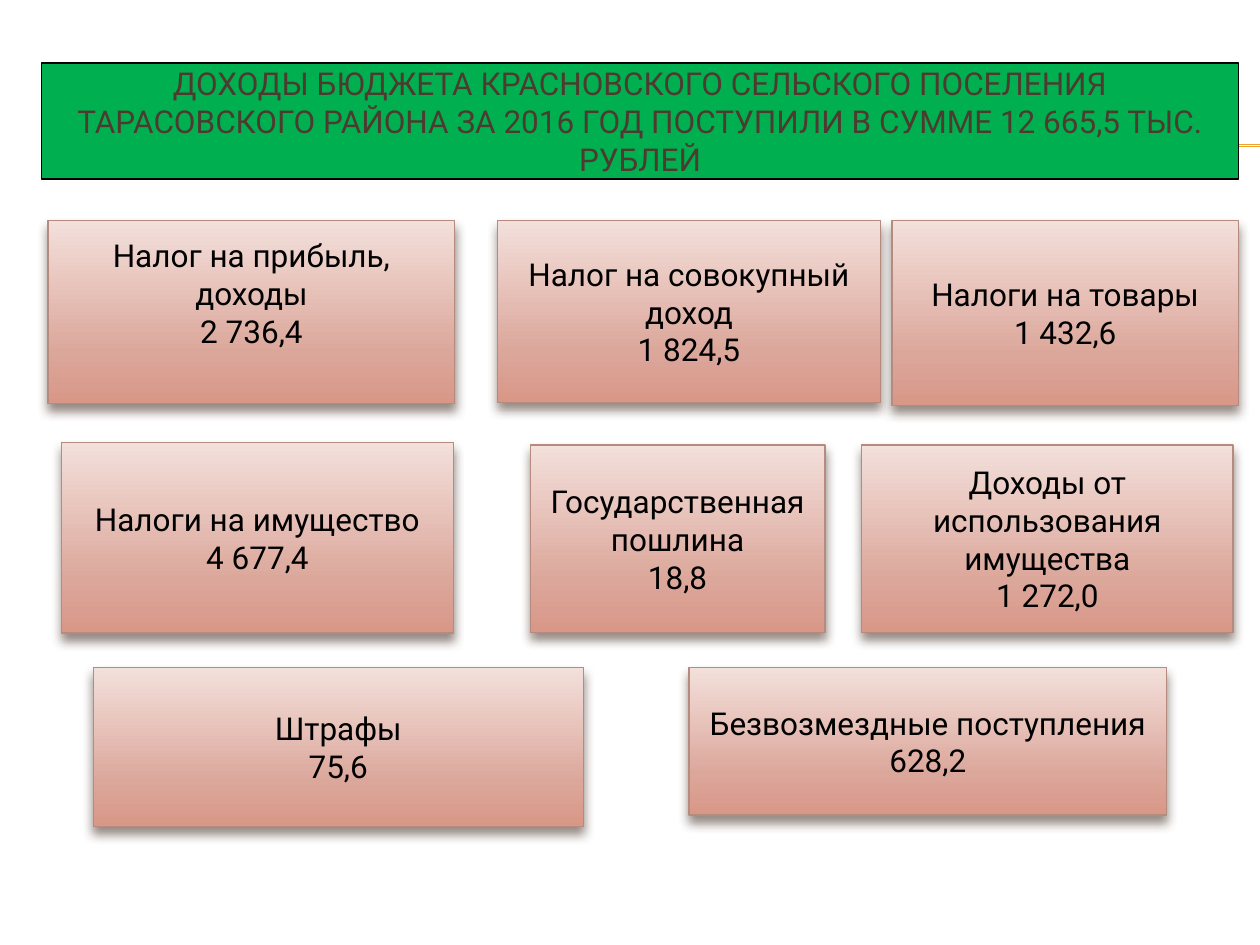
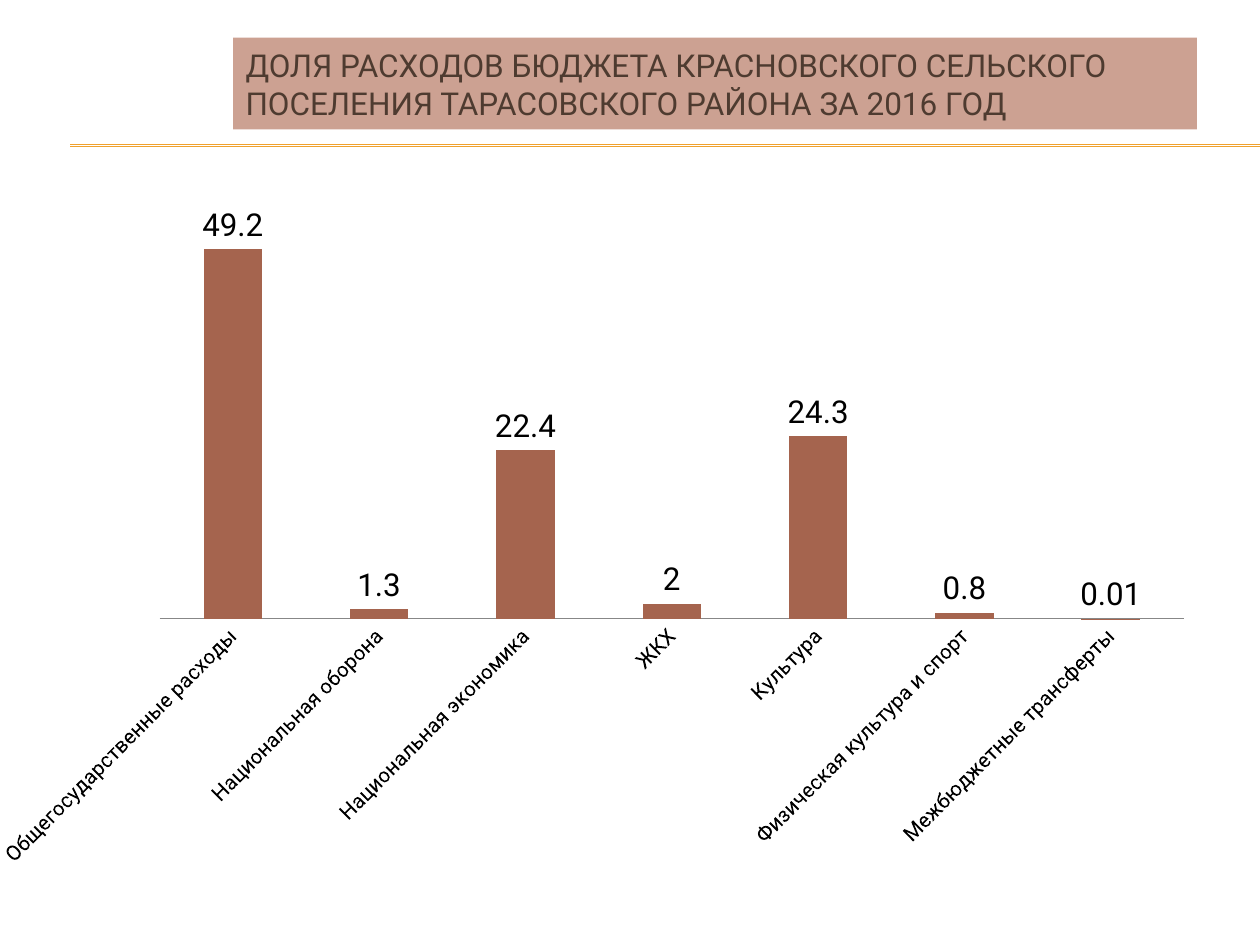
from copy import deepcopy

from lxml.etree import SubElement
from pptx import Presentation
from pptx.chart.data import CategoryChartData
from pptx.dml.color import RGBColor
from pptx.enum.chart import XL_CHART_TYPE, XL_LABEL_POSITION, XL_TICK_MARK
from pptx.enum.shapes import MSO_CONNECTOR, MSO_SHAPE
from pptx.enum.text import MSO_ANCHOR, PP_ALIGN
from pptx.oxml import parse_xml
from pptx.oxml.ns import nsdecls, qn
from pptx.util import Cm, Pt

# Shared look
FONT = "Roboto"
SIZE = Pt(18)
BLACK = RGBColor(0, 0, 0)
BROWN = RGBColor(0x4E, 0x3B, 0x30)
GOLD = RGBColor(0xF0, 0xA2, 0x2E)
GREEN = RGBColor(0x00, 0xB0, 0x50)
ROSE = RGBColor(0xCC, 0xA1, 0x92)
EDGE = RGBColor(0xB5, 0x8B, 0x80)
BAR = RGBColor(0xA5, 0x64, 0x4E)
GRAY = RGBColor(0x87, 0x87, 0x87)
FADE = [(0, RGBColor(0xF3, 0xE0, 0xDB)),
        (0.72, RGBColor(0xDC, 0xA7, 0x9B)),
        (1, RGBColor(0xD8, 0x97, 0x87))]

# Income cards: left, top, width, height (cm), name, sum
CARDS = [
    (0.97, 4.45, 8.2, 3.68, "Налог на прибыль, доходы", "2 736,4"),
    (10.03, 4.45, 7.72, 3.66, "Налог на совокупный доход", "1 824,5"),
    (17.98, 4.45, 6.99, 3.73, "Налоги на товары", "1 432,6"),
    (1.24, 8.92, 7.9, 3.84, "Налоги на имущество", "4 677,4"),
    (10.69, 8.97, 5.94, 3.78, "Государственная пошлина", "18,8"),
    (17.37, 8.97, 7.49, 3.78, "Доходы от использования имущества", "1 272,0"),
    (1.88, 13.46, 9.88, 3.2, "Штрафы", "75,6"),
    (13.89, 13.46, 9.63, 2.97, "Безвозмездные поступления", "628,2"),
]

# Share of spending, per cent
COSTS = {
    "Общегосударственные расходы": 49.2,
    "Национальная оборона": 1.3,
    "Национальная экономика": 22.4,
    "ЖКХ": 2,
    "Культура": 24.3,
    "Физическая культура и спорт": 0.8,
    "Межбюджетные трансферты": 0.01,
}


def style(font, color, size=SIZE):
    font.name = FONT
    font.size = size
    font.color.rgb = color


def add_box(slide, area, text, color, align):
    """Add a rectangle with middle-anchored text and no shadow."""
    box = slide.shapes.add_shape(MSO_SHAPE.RECTANGLE, *map(Cm, area))
    box.shadow.inherit = False
    frame = box.text_frame
    frame.text = text
    frame.word_wrap = True
    frame.vertical_anchor = MSO_ANCHOR.MIDDLE
    for para in frame.paragraphs:
        para.alignment = align
        for run in para.runs:
            style(run.font, color)
    return box


def add_title(slide, area, text, fill, align, edge=None):
    box = add_box(slide, area, text, BROWN, align)
    box.fill.solid()
    box.fill.fore_color.rgb = fill
    if edge is None:
        box.line.fill.background()
    else:
        box.line.color.rgb = edge
        box.line.width = Pt(0.75)


def add_rule(slide):
    """Draw the double gold line under the title."""
    for y in (2.92, 2.95):
        line = slide.shapes.add_connector(
            MSO_CONNECTOR.STRAIGHT, Cm(1.42), Cm(y), Cm(25.4), Cm(y))
        line.line.color.rgb = GOLD
        line.line.width = Pt(0.75)
        SubElement(line._element.spPr, qn("a:effectLst"))


def add_fade(box):
    """Fill from light at the top to dark at the bottom."""
    box.fill.gradient()
    box.fill.gradient_angle = 270
    stops = box._element.spPr.find(qn("a:gradFill")).find(qn("a:gsLst"))
    stops.append(deepcopy(stops[0]))
    for stop, (place, color) in zip(box.fill.gradient_stops, FADE):
        stop.position = place
        stop.color.rgb = color


def add_shade(box):
    effects = box._element.spPr.find(qn("a:effectLst"))
    effects.append(parse_xml(
        f'<a:outerShdw {nsdecls("a")} blurRad="{Pt(6)}" dist="{Pt(4)}" '
        f'dir="5400000" rotWithShape="0"><a:srgbClr val="{BROWN}">'
        '<a:alpha val="60000"/></a:srgbClr></a:outerShdw>'))


def add_card(slide, area, name, total):
    box = add_box(slide, area, f"{name}\n{total}", BLACK, PP_ALIGN.CENTER)
    add_fade(box)
    add_shade(box)
    box.line.color.rgb = EDGE
    box.line.width = Pt(0.79)
    return box


def set_plot(chart, **sides):
    """Fix the inner plot area, in shares of the chart."""
    area = chart._chartSpace.chart.plotArea
    for old in area.findall(qn("c:layout")):
        area.remove(old)
    parts = "".join(f'<c:{k} val="{v}"/>' for k, v in sides.items())
    area.insert(0, parse_xml(
        f'<c:layout {nsdecls("c")}><c:manualLayout>'
        '<c:layoutTarget val="inner"/><c:xMode val="edge"/>'
        f'<c:yMode val="edge"/>{parts}</c:manualLayout></c:layout>'))


def add_bars(slide, area, costs):
    data = CategoryChartData()
    data.categories = list(costs)
    data.add_series("Series 1", list(costs.values()))
    chart = slide.shapes.add_chart(
        XL_CHART_TYPE.COLUMN_CLUSTERED, *map(Cm, area), data).chart
    chart.has_legend = False
    chart.has_title = False
    style(chart.font, BLACK)
    set_plot(chart, x=0.127, y=0.026, w=0.856, h=0.565)

    # Bars and their values
    plot = chart.plots[0]
    plot.gap_width = 150
    plot.vary_by_categories = False
    fill = plot.series[0].format.fill
    fill.solid()
    fill.fore_color.rgb = BAR
    plot.has_data_labels = True
    labels = plot.data_labels
    labels.show_value = True
    labels.position = XL_LABEL_POSITION.OUTSIDE_END
    style(labels.font, BLACK)

    # Axes
    scale = chart.value_axis
    scale.minimum_scale, scale.maximum_scale = 0, 60
    scale.has_major_gridlines = False
    scale.visible = False
    axis = chart.category_axis
    axis.major_tick_mark = XL_TICK_MARK.NONE
    axis.format.line.color.rgb = GRAY
    style(axis.tick_labels.font, BLACK, Pt(12))
    body = axis._element.find(qn("c:txPr")).find(qn("a:bodyPr"))
    body.set("rot", "-2700000")


def add_page(deck):
    slide = deck.slides.add_slide(deck.slide_layouts[6])
    add_rule(slide)
    return slide


def main():
    deck = Presentation()
    deck.slide_width, deck.slide_height = Cm(25.4), Cm(19.05)

    # Income
    slide = add_page(deck)
    add_title(slide, (0.84, 1.27, 24.13, 2.34),
              "ДОХОДЫ БЮДЖЕТА КРАСНОВСКОГО СЕЛЬСКОГО ПОСЕЛЕНИЯ ТАРАСОВСКОГО "
              "РАЙОНА ЗА 2016 ГОД ПОСТУПИЛИ В СУММЕ 12 665,5 ТЫС. РУБЛЕЙ",
              GREEN, PP_ALIGN.CENTER, BLACK)
    cards = [add_card(slide, area, name, total)
             for *area, name, total in CARDS]
    cards[0].text_frame.margin_bottom = Cm(0.89)  # text sits a little higher

    # Spending
    slide = add_page(deck)
    add_title(slide, (4.7, 0.76, 19.43, 1.85),
              "ДОЛЯ РАСХОДОВ БЮДЖЕТА КРАСНОВСКОГО СЕЛЬСКОГО ПОСЕЛЕНИЯ "
              "ТАРАСОВСКОГО РАЙОНА ЗА 2016 ГОД", ROSE, PP_ALIGN.LEFT)
    add_bars(slide, (0, 2.97, 24.28, 16.08), COSTS)

    deck.save("out.pptx")


if __name__ == "__main__":
    main()
